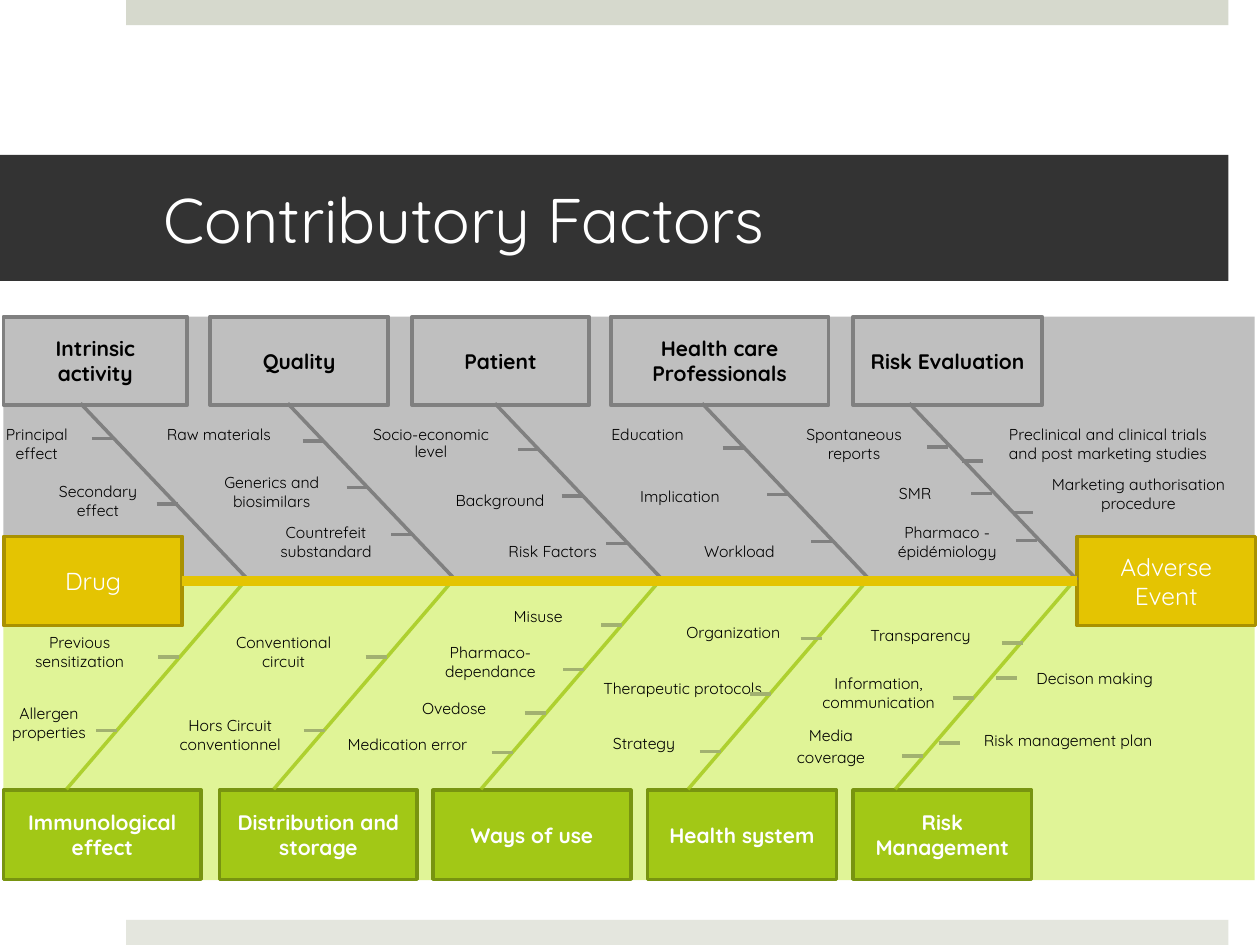
from dataclasses import dataclass

from lxml import etree
from pptx import Presentation
from pptx import util as u
from pptx.dml.color import RGBColor
from pptx.enum import shapes, text
from pptx.oxml.ns import qn

Pt = u.Pt


@dataclass(frozen=True)
class Theme:
    font: str = "Quicksand"
    title: float = 36
    end: float = 14
    head: float = 12
    label: float = 9
    white: str = "FFFFFF"
    black: str = "000000"
    dark: str = "333333"
    top_bar: str = "D6D9CD"
    bottom_bar: str = "E4E6DE"
    grey: str = "BFBFBF"
    grey_line: str = "808080"
    pale_green: str = "E0F497"
    green: str = "A2C816"
    green_line: str = "789410"
    green_tick: str = "A2B170"
    gold: str = "E4C402"
    gold_line: str = "A99101"


class Fishbone:
    def __init__(self, prs, theme):
        self.t = theme
        self.s = prs.slides.add_slide(prs.slide_layouts[6])

    def set_text(self, tf, words, size, color, bold=False, align=text.PP_ALIGN.CENTER, spacing=None):
        tf.word_wrap = True
        tf.vertical_anchor = text.MSO_ANCHOR.MIDDLE
        for i, line in enumerate(words.split("\n")):
            p = tf.add_paragraph() if i else tf.paragraphs[0]
            p.add_run().text = line
            p.alignment = align
            if spacing:
                p.line_spacing = spacing
            p.font.name = self.t.font
            p.font.size = Pt(size)
            p.font.bold = bold
            p.font.color.rgb = RGBColor.from_string(color)

    def rect(self, x, y, w, h, fill, line=None, weight=2):
        sp = self.s.shapes.add_shape(shapes.MSO_SHAPE.RECTANGLE, Pt(x), Pt(y), Pt(w), Pt(h))
        sp.shadow.inherit = False
        sp.fill.solid()
        sp.fill.fore_color.rgb = RGBColor.from_string(fill)
        if line:
            sp.line.color.rgb = RGBColor.from_string(line)
            sp.line.width = Pt(weight)
        else:
            sp.line.fill.background()
        return sp

    def title(self, words, x, y, w, h):
        tf = self.rect(x, y, w, h, self.t.dark).text_frame
        tf.margin_left, tf.margin_right = Pt(93.6), Pt(21.6)
        self.set_text(tf, words, self.t.title, self.t.white, align=text.PP_ALIGN.LEFT)

    def box(self, words, x, y, w, h, fill, line, color, size, bold=True, weight=2):
        sp = self.rect(x, y, w, h, fill, line, weight)
        self.set_text(sp.text_frame, words, size, color, bold)
        return sp

    def label(self, words, x, y, w, lines=1, spacing=None):
        tb = self.s.shapes.add_textbox(Pt(x), Pt(y), Pt(w), Pt(7.2 + 11 * lines))
        self.set_text(tb.text_frame, words, self.t.label, self.t.black, spacing=spacing)

    def line(self, x1, y1, x2, y2, color, weight=2, alpha=None):
        cn = self.s.shapes.add_connector(
            shapes.MSO_CONNECTOR.STRAIGHT, Pt(x1), Pt(y1), Pt(x2), Pt(y2))
        cn.line.color.rgb = RGBColor.from_string(color)
        cn.line.width = Pt(weight)
        if alpha:
            clr = next(cn._element.spPr.iter(qn("a:srgbClr")))
            etree.SubElement(clr, qn("a:alpha")).set("val", str(alpha * 1000))
        etree.SubElement(cn._element.spPr, qn("a:effectLst"))
        return cn

    def tick(self, x, y, color):
        self.line(x, y, x + 12, y, color)


CAUSES = [("Intrinsic activity", 2, 105), ("Quality", 120, 102), ("Patient", 235.5, 101),
          ("Health care Professionals", 349, 124.5), ("Risk Evaluation", 487.5, 108)]
SYSTEMS = [("Immunological effect", 2, 113), ("Distribution and storage", 125.5, 113),
           ("Ways of use", 247.5, 113), ("Health system", 370, 108),
           ("Risk Management", 487.5, 102)]

LABELS = [
    ("Principal\neffect", -9, 239, 60, 2),
    ("Secondary\neffect", 24, 271.5, 64, 2),
    ("Raw materials", 82.5, 239, 85),
    ("Generics and biosimilars", 107, 266.5, 96.5, 2),
    ("Countrefeit\nsubstandard", 137, 295, 98.5, 2),
    ("Socio-economic level", 201.5, 239, 89.5, 2, 0.9),
    ("Background", 249, 277, 73.5),
    ("Risk Factors", 279, 306, 73.5),
    ("Education", 324.5, 239, 91),
    ("Implication", 352, 274.5, 73),
    ("Workload", 381.5, 306, 82),
    ("Spontaneous reports", 440.5, 239, 95, 2),
    ("SMR", 498, 273, 50),
    ("Pharmaco -\népidémiology", 493, 295, 96.5, 2),
    ("Preclinical and clinical trials and post marketing studies", 563, 239, 140, 2),
    ("Marketing authorisation procedure", 588, 267.5, 125, 2),
    ("Previous sensitization", 1.5, 358, 88, 2),
    ("Allergen properties", -5, 398.5, 66, 2),
    ("Conventional circuit", 117, 358, 90, 2),
    ("Hors Circuit conventionnel", 86.5, 405.5, 90, 2),
    ("Misuse", 268, 343, 79),
    ("Pharmaco-dependance", 232, 363.5, 96.5, 2),
    ("Ovedose", 217.5, 395.5, 84),
    ("Medication error", 182, 416, 101.5),
    ("Organization", 366, 352, 106),
    ("Therapeutic protocols", 337, 378.5, 106, 2),
    ("Strategy", 315, 415.5, 106),
    ("Transparency", 484, 354, 84),
    ("Information,\ncommunication", 459, 381.5, 86, 2),
    ("Media coverage", 438, 411, 73.5, 2, 1.15),
    ("Decison making", 567.5, 378.5, 116),
    ("Risk management plan", 545, 414, 130.5),
]

TOP_TICKS = [
    (52.5, 250.5), (89.5, 288), (173, 252), (198, 278.5), (223.5, 305.5),
    (296, 257), (321, 283.5), (346.5, 310.5), (413, 256), (438.5, 282.5), (463.5, 309.5),
    (530, 255.5), (555, 282), (580.5, 309), (549.5, 263.5), (578.5, 293)]
BOTTOM_TICKS = [
    (90.5, 375.5), (55, 417.5), (209, 375.5), (173.5, 417.5),
    (343.5, 357), (322, 382.5), (300, 407.5), (281, 430), (457.5, 365), (428.5, 396.5),
    (400, 429.5), (572.5, 367.5), (544.5, 399), (515.5, 432), (569, 387.5), (536.5, 424.5)]


def main():
    prs = Presentation()
    prs.slide_width, prs.slide_height = Pt(720), Pt(540)
    t = Theme()
    f = Fishbone(prs, t)

    f.rect(72, 0, 630, 14.4, t.top_bar)
    f.rect(72, 525.6, 630, 14.4, t.bottom_bar)
    f.title("Contributory Factors", 0, 88.5, 702, 72)
    f.rect(2, 332.5, 715, 170.5, t.pale_green)
    f.rect(2, 181, 715, 151.5, t.grey)

    for words, x, w in CAUSES:
        f.box(words, x, 181, w, 50.5, t.grey, t.grey_line, t.black, t.head, weight=2.25)
    for words, x, w in SYSTEMS:
        f.box(words, x, 451.5, w, 51, t.green, t.green_line, t.white, t.head)
    drug, event = [
        f.box(words, x, 306.5, 102, 51, t.gold, t.gold_line, t.white, t.end, bold=False)
        for words, x in (("Drug", 2.2), ("Adverse Event", 615.5))]

    for label in LABELS:
        f.label(*label)

    for i in range(5):
        shift = 118.4 * i
        f.line(38 + shift, 451, 141.3 + shift, 330.5, t.green, alpha=80)
        f.line(46 + shift, 230.5, 142 + shift, 331.5, t.grey_line)
    for x, y in TOP_TICKS:
        f.tick(x, y, t.grey_line)
    for x, y in BOTTOM_TICKS:
        f.tick(x, y, t.green_tick)

    spine = f.line(104.2, 332, 615.5, 332, t.gold, weight=6)
    spine.begin_connect(drug, 3)
    spine.end_connect(event, 1)

    prs.save("out.pptx")


if __name__ == "__main__":
    main()
